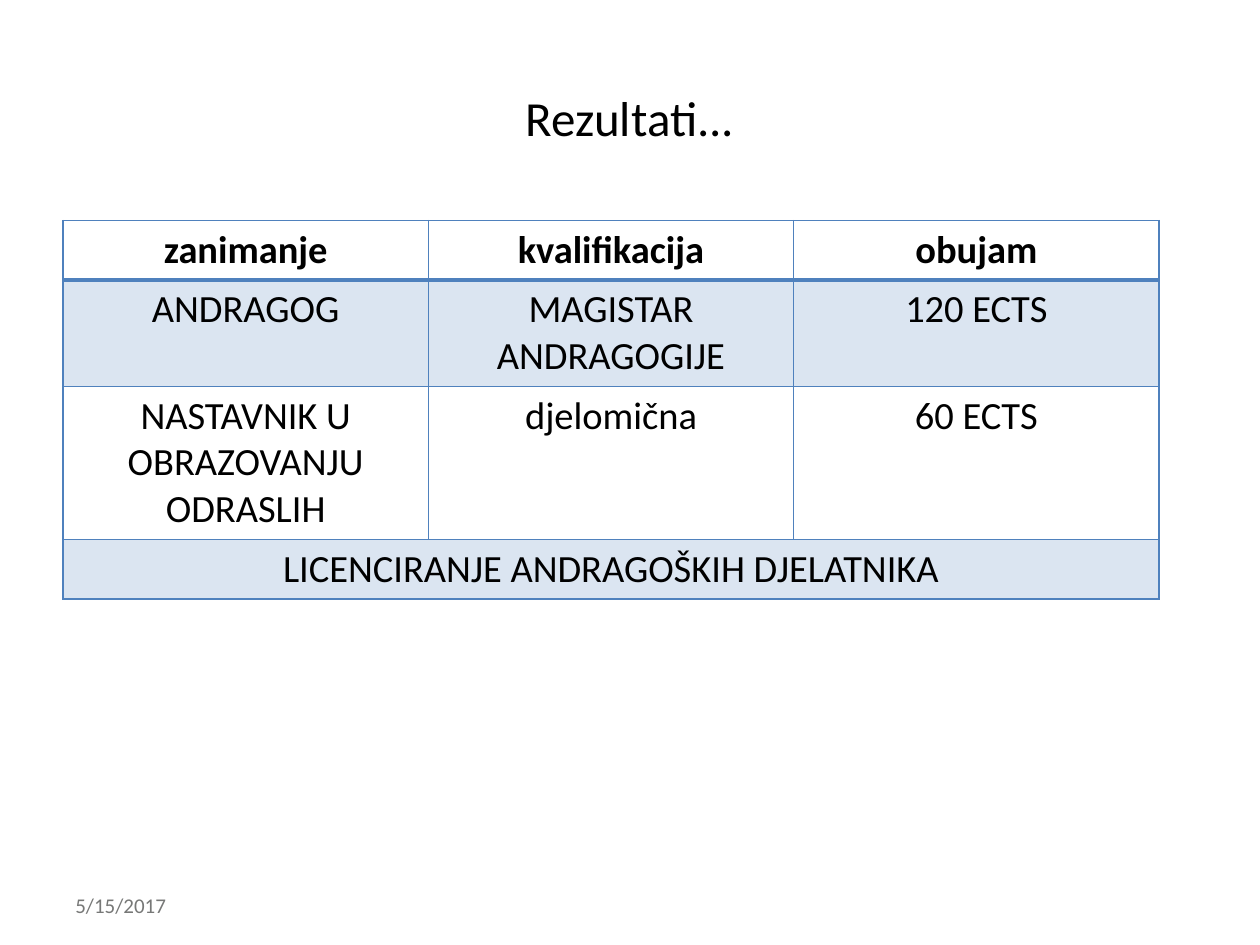
from dataclasses import dataclass

from lxml.etree import SubElement
from pptx import Presentation
from pptx.dml.color import RGBColor
from pptx.enum.text import MSO_ANCHOR, PP_ALIGN
from pptx.oxml.ns import qn
from pptx.util import Inches, Pt

FONT = "Calibri"
BLUE = "4F81BD"
BLACK = "000000"
COLUMN_WIDTH, ROW_HEIGHT = 2.9, 0.41


@dataclass
class Row:
    texts: list[str]
    header: bool = False
    shaded: bool = False


ROWS = [
    Row(["zanimanje", "kvalifikacija", "obujam"], header=True),
    Row(["ANDRAGOG", "MAGISTAR ANDRAGOGIJE", "120 ECTS"], shaded=True),
    Row(["NASTAVNIK U OBRAZOVANJU ODRASLIH", "djelomična", "60 ECTS"]),
    Row(["LICENCIRANJE ANDRAGOŠKIH DJELATNIKA"], shaded=True),
]


def color(value: str) -> RGBColor:
    return RGBColor.from_string(value)


def write(tf, text: str, size: float, fill: str, align=PP_ALIGN.LEFT, bold=False) -> None:
    p = tf.paragraphs[0]
    p.text = text
    p.alignment = align
    p.font.name, p.font.size, p.font.bold = FONT, Pt(size), bold
    p.font.color.rgb = color(fill)


def set_border(cell, side: str, width: float) -> None:
    ln = SubElement(cell._tc.get_or_add_tcPr(), qn(f"a:ln{side}"), w=str(Pt(width)))
    SubElement(SubElement(ln, qn("a:solidFill")), qn("a:srgbClr"), val=BLUE)


def shade(cell) -> None:
    cell.fill.solid()
    cell.fill.fore_color.rgb = color(BLUE)
    rgb = cell._tc.tcPr.find(f"{qn('a:solidFill')}/{qn('a:srgbClr')}")
    SubElement(rgb, qn("a:alpha"), val="20000")


def format_cell(cell, row: Row, below_header: bool) -> None:
    # Borders come before the fill in the cell properties
    for side in "LRTB":
        thick = (row.header and side == "B") or (below_header and side == "T")
        set_border(cell, side, 2 if thick else 1)
    if row.shaded:
        shade(cell)
    else:
        cell.fill.background()


def add_results_table(s, rows: list[Row]) -> None:
    n_cols = len(rows[0].texts)
    table = s.shapes.add_table(
        len(rows), n_cols, Inches(0.5), Inches(1.75),
        Inches(n_cols * COLUMN_WIDTH), Inches(len(rows) * ROW_HEIGHT)).table
    table.horz_banding = False
    for i, row in enumerate(rows):
        for j in range(n_cols):
            format_cell(table.cell(i, j), row, i > 0 and rows[i - 1].header)
        if len(row.texts) == 1:
            table.cell(i, 0).merge(table.cell(i, n_cols - 1))
        for j, text in enumerate(row.texts):
            write(table.cell(i, j).text_frame, text, 22, BLACK, PP_ALIGN.CENTER, row.header)


prs = Presentation()
prs.slide_width, prs.slide_height = Inches(10), Inches(7.5)
s = prs.slides.add_slide(prs.slide_layouts[5])

# Title
title = s.shapes.title
title.left, title.top, title.width, title.height = map(Inches, (0.5, 0.3, 9, 1.25))
title.text_frame.vertical_anchor = MSO_ANCHOR.MIDDLE
write(title.text_frame, "Rezultati...", 28, BLACK, PP_ALIGN.CENTER)

# Table of occupations
add_results_table(s, ROWS)

# Date
date = s.shapes.add_textbox(*map(Inches, (0.5, 6.98, 2.33, 0.4)))
date.text_frame.word_wrap = True
date.text_frame.vertical_anchor = MSO_ANCHOR.MIDDLE
write(date.text_frame, "5/15/2017", 12, "777877")

prs.save("out.pptx")
